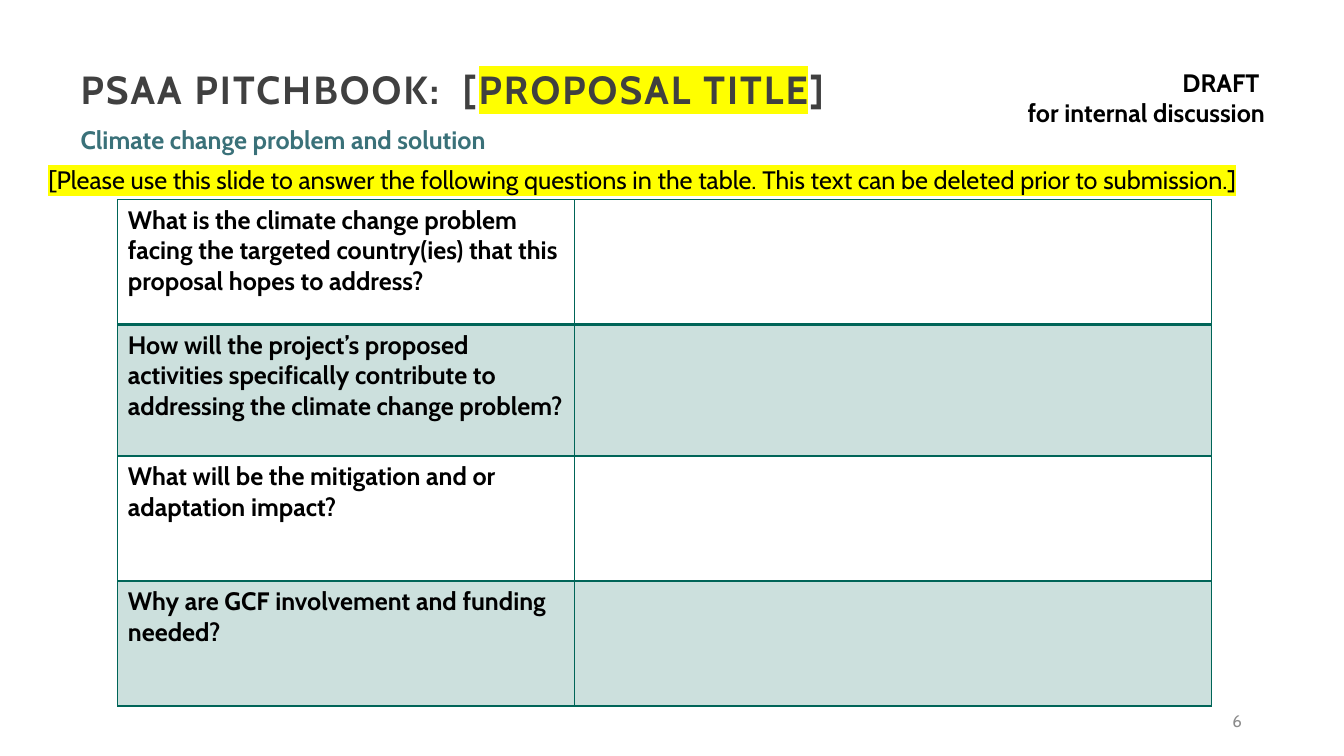
from lxml.etree import SubElement
from pptx import Presentation
from pptx.dml.color import RGBColor
from pptx.enum.text import MSO_ANCHOR, MSO_AUTO_SIZE, PP_ALIGN
from pptx.oxml.ns import qn
from pptx.util import Cm, Pt

FONT = "Cabin"
BLACK = RGBColor(0x00, 0x00, 0x00)
WHITE = RGBColor(0xFF, 0xFF, 0xFF)
CHARCOAL = RGBColor(0x40, 0x40, 0x40)
GREY = RGBColor(0x8C, 0x8C, 0x8C)
TEAL = RGBColor(0x3A, 0x71, 0x79)
GREEN = RGBColor(0x00, 0x65, 0x58)
YELLOW = RGBColor(0xFF, 0xFF, 0x00)

QUESTIONS = [
    "What is the climate change problem facing the targeted country(ies) that this proposal hopes to address?",
    "How will the project’s proposed activities specifically contribute to addressing the climate change problem?",
    "What will be the mitigation and or adaptation impact?",
    "Why are GCF involvement and funding needed?",
]
COLUMN_WIDTHS = [Cm(11.51), Cm(16.05)]
ROW_HEIGHTS = [Cm(3.15), Cm(3.31), Cm(3.15), Cm(3.15)]


def set_font(p, size=18, color=BLACK, bold=False):
    """Set the font of a whole paragraph."""
    p.font.name = FONT
    p.font.size = Pt(size)
    p.font.bold = bold
    p.font.color.rgb = color


def highlight(r):
    """Mark a run in yellow."""
    mark = SubElement(r._r.get_or_add_rPr(), qn("a:highlight"))
    SubElement(mark, qn("a:srgbClr"), val=str(YELLOW))


def add_text(s, box, lines, align=PP_ALIGN.LEFT, grow=True, **font):
    """Add a wrapped text box, one paragraph per line, and return it."""
    sp = s.shapes.add_textbox(*(Cm(v) for v in box))
    tf = sp.text_frame
    tf.word_wrap = True
    tf.auto_size = MSO_AUTO_SIZE.SHAPE_TO_FIT_TEXT if grow else MSO_AUTO_SIZE.NONE
    tf.text = "\n".join(lines)
    for p in tf.paragraphs:
        p.alignment = align
        set_font(p, **font)
    return sp


def add_title(s):
    """Add the title with its highlighted placeholder words."""
    sp = add_text(s, (1.78, 1.65, 25.65, 1.55), ["PSAA PITCHBOOK:  ["],
                  grow=False, size=28, color=CHARCOAL, bold=True)
    p = sp.text_frame.paragraphs[0]
    p.line_spacing = 0.9
    r = p.add_run()
    r.text = "PROPOSAL TITLE"
    highlight(r)
    p.add_run().text = "]"
    for r in p.runs:
        r._r.get_or_add_rPr().set("spc", "150")


def set_borders(cell, widths):
    """Draw the left, right, top and bottom borders in green."""
    tcPr = cell._tc.get_or_add_tcPr()
    for i, (side, width) in enumerate(zip("LRTB", widths)):
        ln = tcPr.makeelement(qn(f"a:ln{side}"), {"w": str(Pt(width))})
        fill = SubElement(ln, qn("a:solidFill"))
        SubElement(fill, qn("a:srgbClr"), val=str(GREEN))
        tcPr.insert(i, ln)


def fill_cell(cell, shaded):
    """Give a cell a pale green fill or none."""
    if not shaded:
        cell.fill.background()
        return
    cell.fill.solid()
    cell.fill.fore_color.rgb = GREEN
    color = cell._tc.tcPr.find(qn("a:solidFill")).find(qn("a:srgbClr"))
    SubElement(color, qn("a:alpha"), val="20000")


def add_questions(s):
    """Add the table of questions with empty answer cells."""
    frame = s.shapes.add_table(len(QUESTIONS), 2, Cm(2.97), Cm(5.03),
                               sum(COLUMN_WIDTHS), sum(ROW_HEIGHTS))
    table = frame.table
    table.first_row = table.horz_banding = False
    for column, width in zip(table.columns, COLUMN_WIDTHS):
        column.width = width
    for i, (row, height, question) in enumerate(zip(table.rows, ROW_HEIGHTS, QUESTIONS)):
        row.height = height
        row.cells[0].text = question
        top = 2 if i == 1 else 1
        bottom = 2 if i == 0 else 1
        for cell in row.cells:
            set_font(cell.text_frame.paragraphs[0], bold=True)
            fill_cell(cell, i % 2 == 1)
            set_borders(cell, (1, 1, top, bottom))


def main():
    """Build the slide and save it."""
    prs = Presentation()
    prs.slide_width, prs.slide_height = Cm(33.87), Cm(19.05)
    s = prs.slides.add_slide(prs.slide_layouts[6])

    add_text(s, (14.81, 1.57, 17.32, 1.8), ["DRAFT ", "for internal discussion"],
             align=PP_ALIGN.RIGHT, bold=True)
    number = add_text(s, (23.93, 17.65, 7.62, 1.02), ["6"],
                      align=PP_ALIGN.RIGHT, grow=False, size=12, color=GREY)
    number.text_frame.vertical_anchor = MSO_ANCHOR.MIDDLE
    number.text_frame.paragraphs[0].space_after = Pt(6)
    add_title(s)
    note = add_text(s, (0.97, 4.01, 31.93, 1.02), [
        "[Please use this slide to answer the following questions in the table. "
        "This text can be deleted prior to submission.]"])
    highlight(note.text_frame.paragraphs[0].runs[0])
    add_questions(s)
    subtitle = add_text(s, (1.78, 3, 15.16, 1.02),
                        ["Climate change problem and solution"], color=TEAL, bold=True)
    subtitle.fill.solid()
    subtitle.fill.fore_color.rgb = WHITE

    prs.save("out.pptx")


if __name__ == "__main__":
    main()
